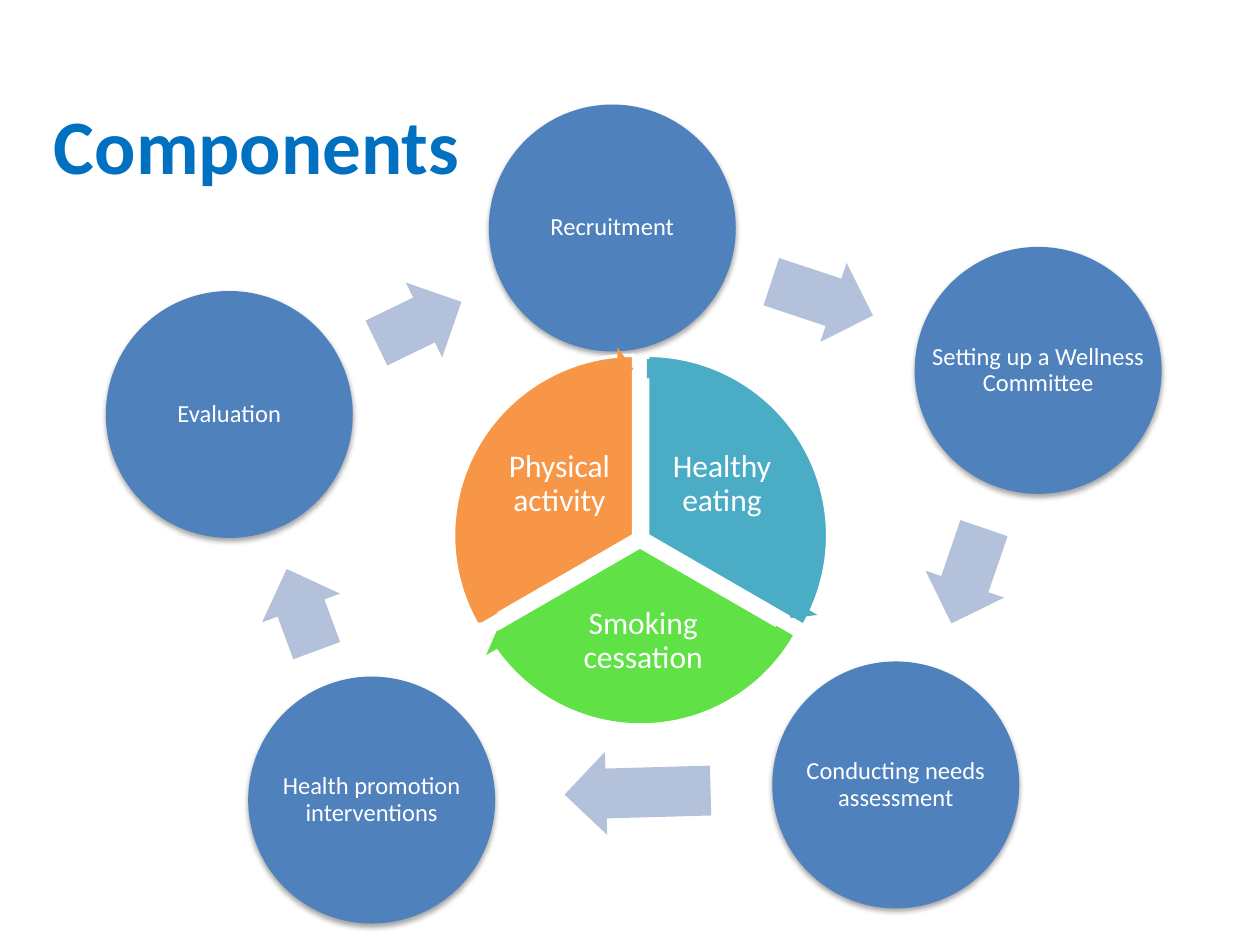
from lxml import etree
from pptx import Presentation
from pptx.dml.color import RGBColor
from pptx.enum.shapes import MSO_SHAPE as SHAPE
from pptx.enum.text import MSO_ANCHOR, PP_ALIGN
from pptx.oxml.ns import qn
from pptx.util import Inches, Pt

COLORS = {"title": "0070C0", "step": "4F81BD", "arrow": "B3C1DB", "white": "FFFFFF",
          "teal": "4BACC6", "green": "60E146", "orange": "F79646", "shadow": "000000"}

# Steps clockwise: label, left, top
STEP_SIZE = 1.96
STEPS = [("Recruitment", 3.88, 0.83),
         ("Setting up a Wellness Committee", 7.26, 1.96),
         ("Conducting needs assessment", 6.13, 5.25),
         ("Health promotion interventions", 1.97, 5.37),
         ("Evaluation", 0.84, 2.31)]

# Arrows between steps: left, top, width, rotation
ARROW_HEIGHT = 0.66
ARROWS = [(6.1, 2.04, 0.85, 18.4), (7.28, 4.24, 0.8, 108.9), (4.48, 5.96, 1.16, 178.4),
          (2.05, 4.51, 0.69, 249.8), (2.95, 2.23, 0.75, 334.1)]

# Wedges: label, colour, pie (left, top, size), start and end angle, label box,
# rim arrow (left, top), arrow head and tail angle
RIM_SIZE = 2.99
WEDGES = [("Healthy eating", "teal", (3.71, 2.82, 2.86), (270, 30),
           (5.22, 3.42, 1.02, 0.85), (3.64, 2.75), (24.54, 269.99)),
          ("Smoking cessation", "green", (3.75, 3.01, 2.66), (30, 150),
           (4.39, 4.74, 1.43, 0.7), (3.59, 2.85), (144.53, 30.01)),
          ("Physical activity", "orange", (3.6, 2.82, 2.86), (150, 270),
           (3.93, 3.42, 1.02, 0.85), (3.53, 2.75), (264.55, 150))]


def rgb(name):
    return RGBColor.from_string(COLORS[name])


def angle(degrees):
    """Degrees as an adjustment value (60000 units per degree, scaled by 100000)."""
    return degrees * 0.6


def add_shape(kind, box, color, adjustments=(), rotation=0):
    s = slide.shapes.add_shape(kind, *map(Inches, box))
    s.shadow.inherit = False
    s.fill.solid()
    s.fill.fore_color.rgb = rgb(color)
    s.line.fill.background()
    s.rotation = rotation
    for i, value in enumerate(adjustments):
        s.adjustments[i] = value
    return s


def add_text(text, box, size, color="white", inset=0.02, align=PP_ALIGN.CENTER,
             spacing=0.9, bold=False):
    tf = slide.shapes.add_textbox(*map(Inches, box)).text_frame
    tf.word_wrap = True
    tf.vertical_anchor = MSO_ANCHOR.MIDDLE
    for side in ("left", "top", "right", "bottom"):
        setattr(tf, f"margin_{side}", Inches(inset))
    p = tf.paragraphs[0]
    p.alignment, p.line_spacing = align, spacing
    r = p.add_run()
    r.text = text
    for name, value in {"name": "Calibri", "size": Pt(size), "bold": bold}.items():
        setattr(r.font, name, value)
    r.font.color.rgb = rgb(color)


def add_shadow(s):
    effects = s._element.spPr.find(qn("a:effectLst"))
    shadow = etree.SubElement(effects, qn("a:outerShdw"), blurRad=str(Pt(3.1)),
                              dist=str(Pt(1.8)), dir="5400000", rotWithShape="0")
    color = etree.SubElement(shadow, qn("a:srgbClr"), val=COLORS["shadow"])
    etree.SubElement(color, qn("a:alpha"), val="35000")


prs = Presentation()
prs.slide_width, prs.slide_height = Inches(10), Inches(7.5)
slide = prs.slides.add_slide(prs.slide_layouts[6])

# Title
add_text("Components", (0.33, 0.83, 8.75, 0.62), 44, "title", inset=0.1,
         align=PP_ALIGN.LEFT, spacing=1.0, bold=True)

# Outer cycle: each step followed by its arrow
for (label, x, y), (ax, ay, width, rotation) in zip(STEPS, ARROWS):
    box = (x, y, STEP_SIZE, STEP_SIZE)
    add_shadow(add_shape(SHAPE.OVAL, box, "step"))
    add_text(label, box, 14)
    add_shape(SHAPE.RIGHT_ARROW, (ax, ay, width, ARROW_HEIGHT), "arrow", (0.6, 0.5), rotation)

# Inner pie
for label, color, (x, y, size), angles, label_box, _, _ in WEDGES:
    s = add_shape(SHAPE.PIE, (x, y, size, size), color, map(angle, angles))
    s.line.color.rgb = rgb("white")
    s.line.width = Pt(2)
    add_text(label, label_box, 18, inset=0.03)

# Thin arrows around the pie
for _, color, _, _, _, (x, y), (head, tail) in WEDGES:
    add_shape(SHAPE.CIRCULAR_ARROW, (x, y, RIM_SIZE, RIM_SIZE), color,
              (0.051, angle(5.46), angle(head), angle(tail), 0.059))

prs.save("out.pptx")
